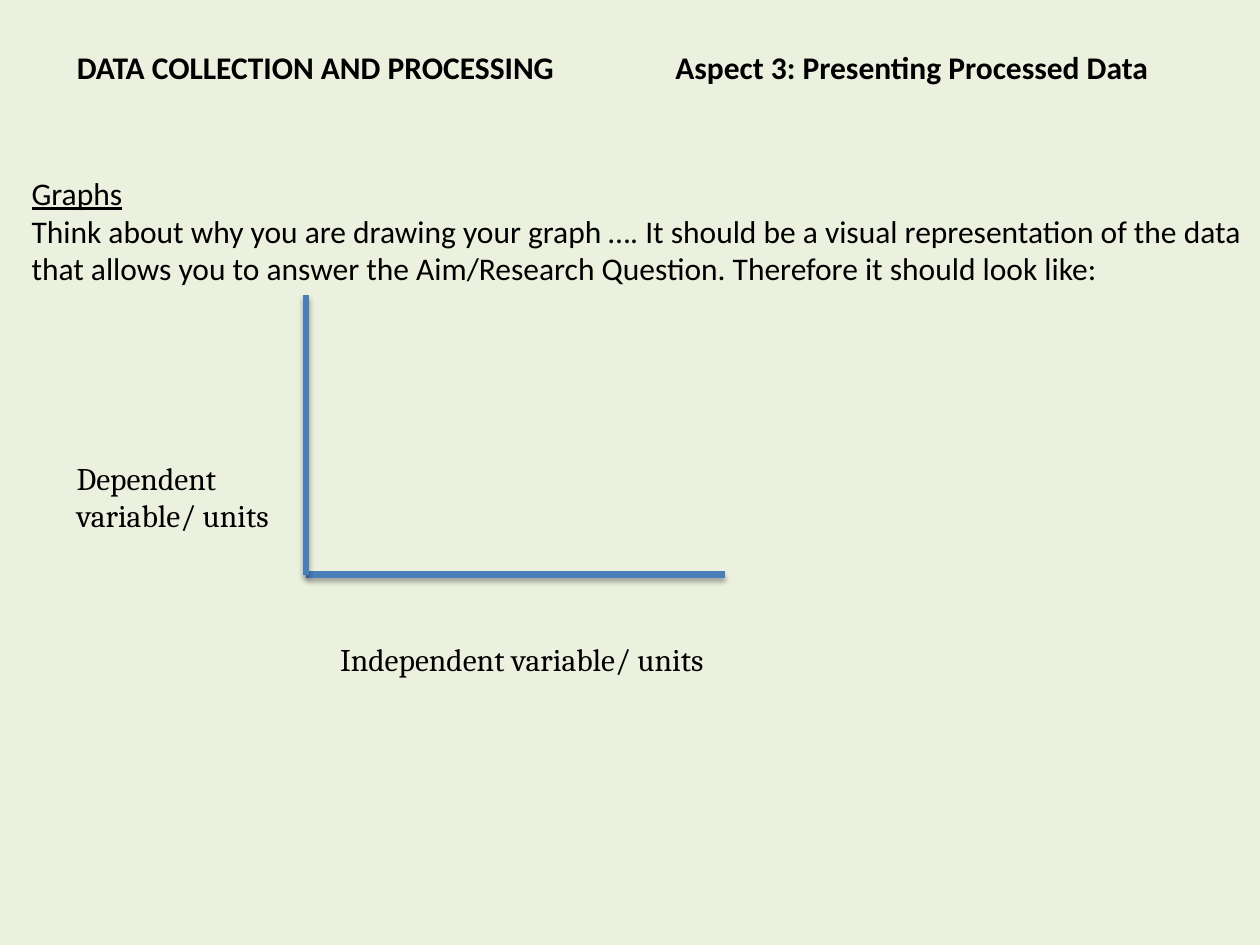
"""Build a slide on presenting processed data with a labelled pair of graph axes."""
from dataclasses import dataclass

from lxml import etree
from pptx import Presentation
from pptx.dml.color import RGBColor
from pptx.enum.shapes import MSO_CONNECTOR
from pptx.enum.text import MSO_ANCHOR, MSO_AUTO_SIZE, PP_ALIGN
from pptx.oxml.ns import qn
from pptx.util import Inches, Pt

STRAIGHT = MSO_CONNECTOR.STRAIGHT
TOP = MSO_ANCHOR.TOP
LEFT = PP_ALIGN.LEFT
NO_FIT = MSO_AUTO_SIZE.NONE

COLORS = {"background": "EBF1DE", "text": "000000", "axis": "4A7EBB", "shadow": "000000"}
CELL = Inches(0.1)
COLUMNS, ROWS = 100, 75
ORIGIN = (24.3, 45.6)
AXIS_ENDS = ((57.5, 45.6), (24.3, 23.4))


@dataclass(frozen=True)
class Area:
    """A rectangle in grid columns and rows."""
    column: float
    row: float
    columns: float
    rows: float


@dataclass(frozen=True)
class AxisLabel:
    """The wording and area of one axis label."""
    text: str
    area: Area


TITLE_AREA = Area(5.1, 3.3, 89.2, 4)
BODY_AREA = Area(1.5, 13.3, 98.5, 10.1)
TITLE = "DATA COLLECTION AND PROCESSING\tAspect 3: Presenting Processed Data"
BODY = (
    ("Graphs", True),
    ("Think about why you are drawing your graph …. It should be a visual representation "
     "of the data that allows you to answer the Aim/Research Question. "
     "Therefore it should look like:", False),
)
LABELS = (
    AxisLabel("Dependent variable/ units", Area(5.1, 35.4, 19.2, 7.5)),
    AxisLabel("Independent variable/ units", Area(26, 49.8, 31.5, 4.8)),
)


def grid(count: float) -> int:
    """Turn a number of grid cells into a length."""
    return round(count * CELL)


def place(box, area: Area) -> None:
    """Move a box to its area and let its text wrap from the top."""
    box.left, box.top = grid(area.column), grid(area.row)
    box.width, box.height = grid(area.columns), grid(area.rows)
    frame = box.text_frame
    frame.word_wrap, frame.auto_size, frame.vertical_anchor = True, NO_FIT, TOP


def write(para, text: str, font: str = "Calibri", bold: bool = False,
          underline: bool = False) -> None:
    """Add one formatted run to a left-aligned paragraph."""
    para.alignment = LEFT
    para.space_before = Pt(0)
    span = para.add_run()
    span.text = text
    span.font.name, span.font.size = font, Pt(18)
    span.font.bold, span.font.underline = bold, underline
    span.font.color.rgb = RGBColor.from_string(COLORS["text"])


def add_title(page) -> None:
    """Fill the title, with its second half on a tab stop."""
    box = page.shapes.title
    place(box, TITLE_AREA)
    para = box.text_frame.paragraphs[0]
    write(para, TITLE, bold=True)
    stops = etree.SubElement(para._p.get_or_add_pPr(), qn("a:tabLst"))
    etree.SubElement(stops, qn("a:tab"), pos=str(grid(47.5)), algn="l")


def add_body(page) -> None:
    """Fill the body with unbulleted paragraphs."""
    box = page.placeholders[1]
    place(box, BODY_AREA)
    for index, (text, underline) in enumerate(BODY):
        frame = box.text_frame
        para = frame.add_paragraph() if index else frame.paragraphs[0]
        write(para, text, underline=underline)
        properties = para._p.get_or_add_pPr()
        properties.set("marL", "0")
        properties.set("indent", "0")
        etree.SubElement(properties, qn("a:buNone"))


def add_axis(page, end: tuple[float, float]) -> None:
    """Draw one shadowed axis from the origin."""
    points = [grid(value) for value in ORIGIN + end]
    axis = page.shapes.add_connector(STRAIGHT, *points)
    axis.line.color.rgb = RGBColor.from_string(COLORS["axis"])
    axis.line.width = Pt(3.5)
    effects = etree.SubElement(axis._element.spPr, qn("a:effectLst"))
    shadow = etree.SubElement(effects, qn("a:outerShdw"), blurRad=str(Pt(3)),
                              dist=str(Pt(2.1)), dir="5400000", rotWithShape="0")
    color = etree.SubElement(shadow, qn("a:srgbClr"), val=COLORS["shadow"])
    etree.SubElement(color, qn("a:alpha"), val="35000")


def add_label(page, label: AxisLabel) -> None:
    """Write one axis label with equal insets."""
    box = page.shapes.add_textbox(0, 0, CELL, CELL)
    place(box, label.area)
    frame = box.text_frame
    frame.margin_left = frame.margin_right = CELL
    frame.margin_top = frame.margin_bottom = CELL
    write(frame.paragraphs[0], label.text, font="Cambria")


def main() -> None:
    """Build and save the deck."""
    deck = Presentation()
    deck.slide_width, deck.slide_height = grid(COLUMNS), grid(ROWS)
    page = deck.slides.add_slide(deck.slide_layouts[1])
    fill = page.background.fill
    fill.solid()
    fill.fore_color.rgb = RGBColor.from_string(COLORS["background"])
    add_title(page)
    add_body(page)
    for end, label in zip(AXIS_ENDS, LABELS):
        add_axis(page, end)
        add_label(page, label)
    deck.save("out.pptx")


if __name__ == "__main__":
    main()
